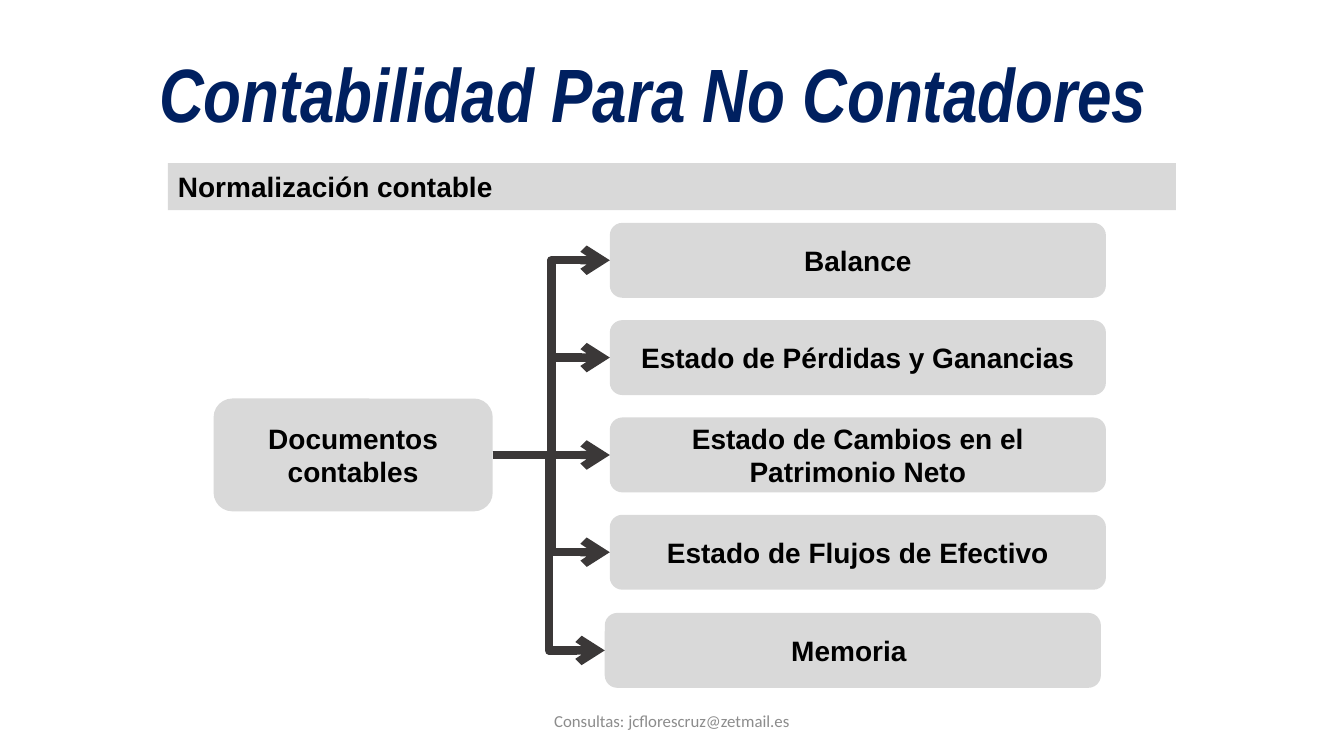
"""Build the slide on accounting documents."""
from dataclasses import dataclass

from lxml.etree import SubElement
from pptx import Presentation
from pptx.dml.color import RGBColor as Rgb
from pptx.enum.shapes import MSO_CONNECTOR as Link, MSO_SHAPE as Form
from pptx.enum.text import MSO_ANCHOR as Anchor, MSO_AUTO_SIZE as Fit, PP_ALIGN as Align
from pptx.oxml.ns import qn
from pptx.util import Pt

TITLE = "Contabilidad Para No Contadores"
TOPIC = "Normalización contable"
ROOT = "Documentos contables"
REPORTS = [
    "Balance",
    "Estado de Pérdidas y Ganancias",
    "Estado de Cambios en el Patrimonio Neto",
    "Estado de Flujos de Efectivo",
]
LAST = "Memoria "
FOOTER = "Consultas: jcflorescruz@zetmail.es"


@dataclass(frozen=True)
class Theme:
    """Colours, fonts and type sizes."""
    panel: str = "D9D9D9"
    line: str = "3B3838"
    ink: str = "000000"
    navy: str = "002060"
    grey: str = "8C8C8C"
    head: str = "Arial Narrow"
    body: str = "Arial"
    foot: str = "Calibri"
    big: int = 54
    mid: int = 20
    small: int = 12
    stroke: int = 6


THEME = Theme()
LEFT, TOP, WIDTH, HEIGHT, STEP = 435.6, 159.2, 354.4, 53.5, 69.5
ROOT_LEFT, ROOT_WIDTH, ROOT_HEIGHT = 152.6, 199.4, 80.6
LAST_LEFT, LAST_TOP = 432, 437.8


def write(shape, text, font, size, color, bold=True, slant=False, align=Align.LEFT):
    """Put one styled run in a shape."""
    frame = shape.text_frame
    frame.word_wrap = True
    frame.vertical_anchor = Anchor.MIDDLE
    para = frame.paragraphs[0]
    para.alignment = align
    run = para.add_run()
    run.text = text
    face = run.font
    face.name, face.size, face.bold, face.italic = font, Pt(size), bold, slant
    face.color.rgb = Rgb.from_string(color)
    return frame


def panel(slide, form, area, text, align):
    """Add a filled panel with bold text."""
    shape = slide.shapes.add_shape(form, *map(Pt, area))
    shape.shadow.inherit = False
    shape.fill.solid()
    shape.fill.fore_color.rgb = Rgb.from_string(THEME.panel)
    shape.line.fill.background()
    write(shape, text, THEME.body, THEME.mid, THEME.ink, align=align)
    return shape


def node(slide, area, text):
    """Add a rounded box of the tree."""
    shape = panel(slide, Form.ROUNDED_RECTANGLE, area, text, Align.CENTER)
    frame = shape.text_frame
    frame.margin_left = frame.margin_right = Pt(8.6)
    frame.margin_top = frame.margin_bottom = 0
    frame.paragraphs[0].space_after = Pt(6)
    return shape


def join(slide, start, end):
    """Link two boxes with an elbow arrow."""
    link = slide.shapes.add_connector(Link.ELBOW, 0, 0, 0, 0)
    link.begin_connect(start, 3)
    link.end_connect(end, 1)
    link.line.width = Pt(THEME.stroke)
    link.line.color.rgb = Rgb.from_string(THEME.line)
    props = link.element.spPr
    SubElement(props.find(qn("a:ln")), qn("a:tailEnd"), type="arrow")
    SubElement(props, qn("a:effectLst"))


def main():
    """Lay out the slide and save it."""
    deck = Presentation()
    deck.slide_width, deck.slide_height = Pt(960), Pt(540)
    slide = deck.slides.add_slide(deck.slide_layouts[6])

    title = slide.shapes.add_textbox(*map(Pt, (106.6, 30.2, 733, 72.7)))
    frame = write(title, TITLE, THEME.head, THEME.big, THEME.navy, slant=True)
    frame.vertical_anchor = Anchor.TOP
    frame.auto_size = Fit.SHAPE_TO_FIT_TEXT

    panel(slide, Form.RECTANGLE, (120, 116.6, 720, 33.6), TOPIC, Align.LEFT)

    center = TOP + (STEP * (len(REPORTS) // 2)) + HEIGHT / 2
    area = ROOT_LEFT, center - ROOT_HEIGHT / 2, ROOT_WIDTH, ROOT_HEIGHT
    root = node(slide, area, ROOT)
    spots = [(LEFT, TOP + i * STEP, text) for i, text in enumerate(REPORTS)]
    spots.append((LAST_LEFT, LAST_TOP, LAST))
    for left, top, text in spots:
        join(slide, root, node(slide, (left, top, WIDTH, HEIGHT), text))

    foot = slide.shapes.add_textbox(*map(Pt, (318, 500.5, 324, 28.8)))
    write(foot, FOOTER, THEME.foot, THEME.small, THEME.grey, bold=False, align=Align.CENTER)

    deck.save("out.pptx")


if __name__ == "__main__":
    main()
